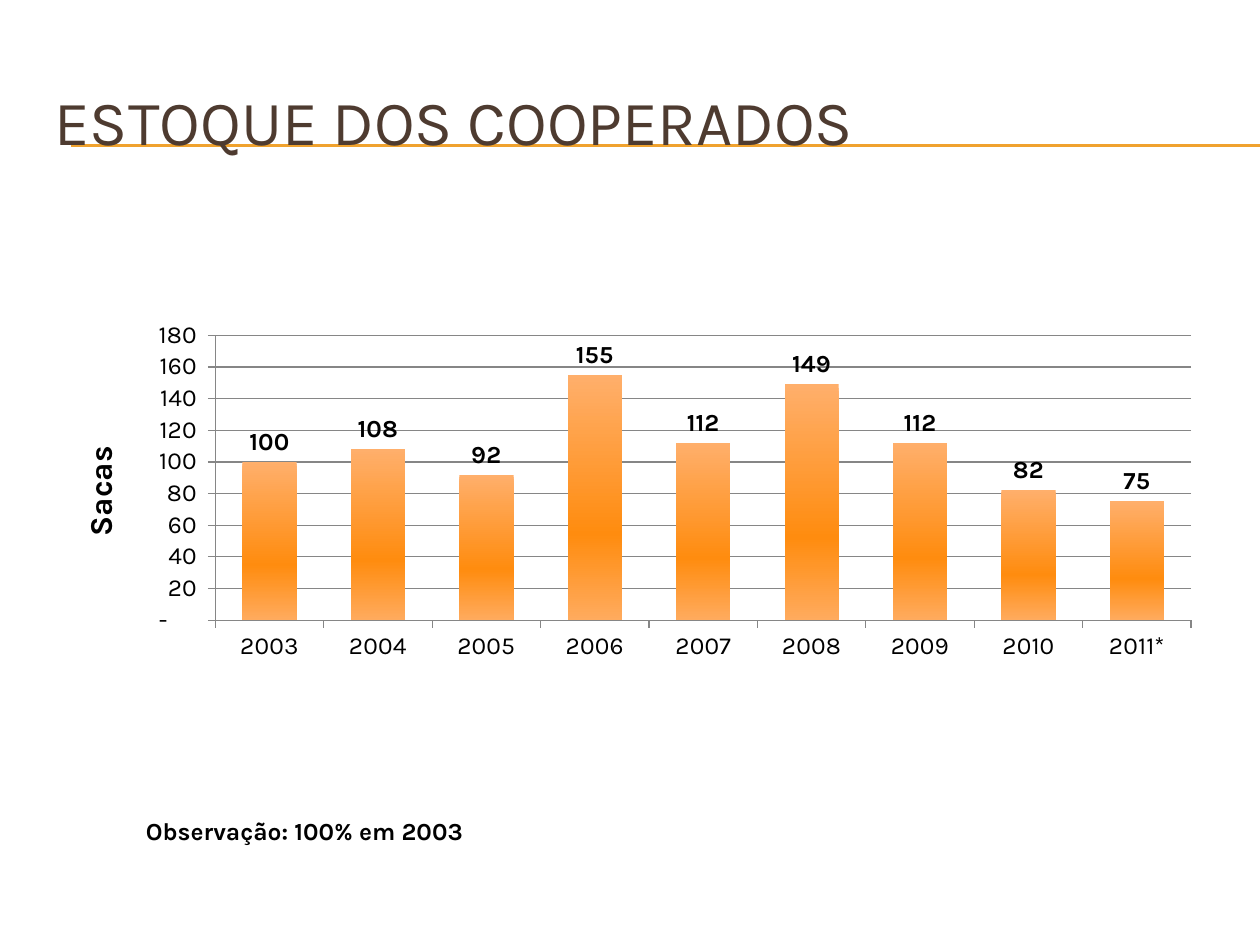
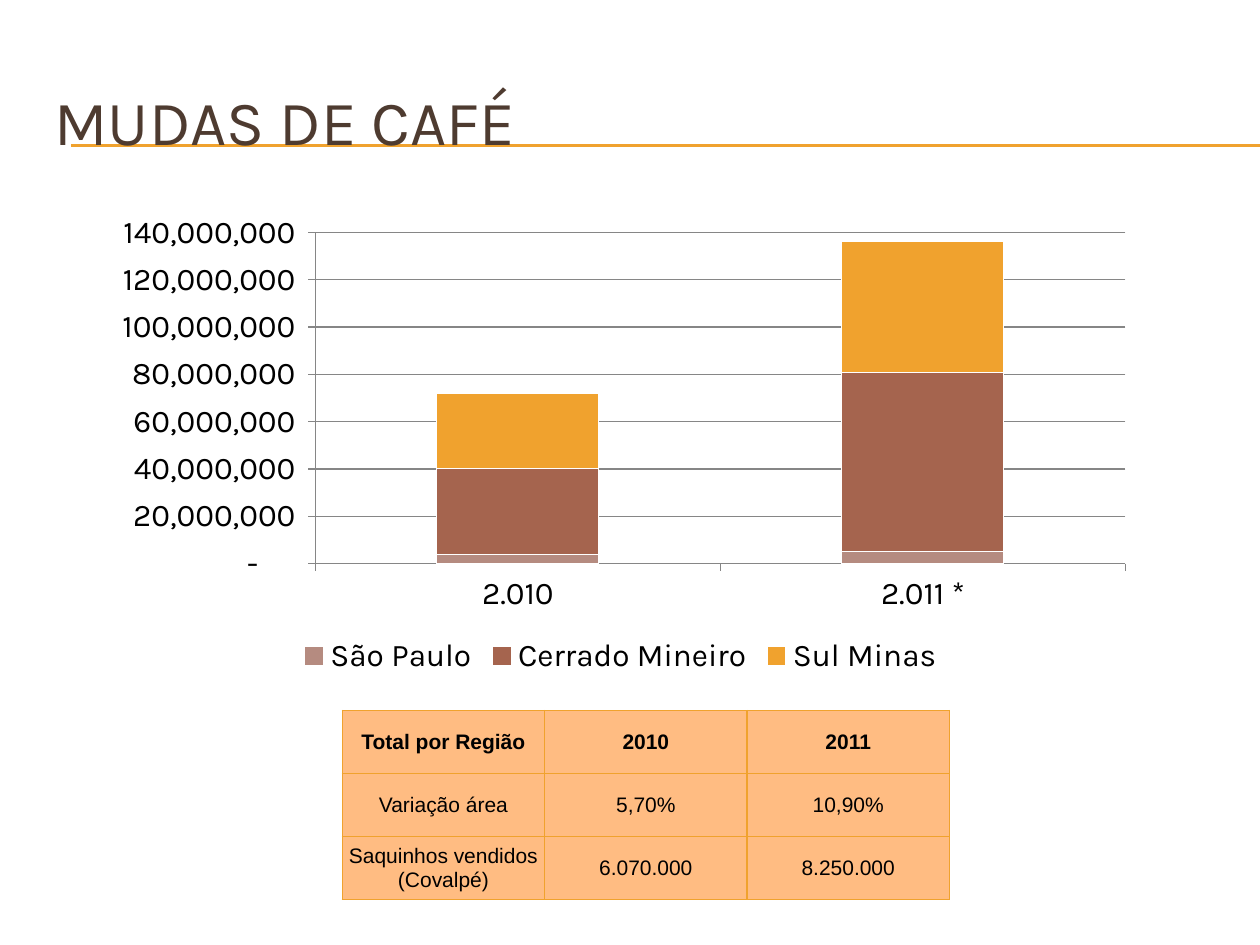
from copy import deepcopy

from lxml import etree
from pptx import Presentation
from pptx.chart.data import CategoryChartData
from pptx.dml.color import RGBColor
from pptx.enum import chart as ch, shapes, text
from pptx.oxml import parse_xml
from pptx.oxml.ns import nsdecls, qn
from pptx.util import Pt

# Shared look
BLACK = RGBColor(0, 0, 0)
WHITE = RGBColor(0xFF, 0xFF, 0xFF)
BROWN = RGBColor(0x4E, 0x3B, 0x30)
GOLD = RGBColor(0xF0, 0xA2, 0x2E)
RUST = RGBColor(0xA5, 0x64, 0x4E)
ROSE = RGBColor(0xB5, 0x8B, 0x80)
PEACH = RGBColor(0xFF, 0xBC, 0x82)
GRAY = RGBColor(0x86, 0x86, 0x86)
GLOW = [(0, RGBColor(0xFF, 0xAF, 0x6B)),
        (0.65, RGBColor(0xFF, 0x8C, 0x0F)),
        (1, RGBColor(0xFF, 0xAB, 0x5E))]
FONT = "Karla"
NUM = '_(* #,##0_);_(* \\(#,##0\\);_(* "-"??_);_('


def style(font, size, color=BLACK, bold=False, name=FONT):
    font.size, font.name, font.bold = Pt(size), name, bold
    font.color.rgb = color


def add_rule(slide, y):
    rule = slide.shapes.add_connector(
        shapes.MSO_CONNECTOR.STRAIGHT, Pt(40.5), Pt(y), Pt(720), Pt(y))
    rule.line.color.rgb = GOLD
    rule.line.width = Pt(0.75)
    etree.SubElement(rule._element.spPr, qn("a:effectLst"))


def add_slide(prs, words):
    """Title slide with the double gold rule behind its title."""
    slide = prs.slides.add_slide(prs.slide_layouts[5])
    for y in (82.8, 83.5):
        add_rule(slide, y)
    title = slide.shapes.title
    title.left, title.top, title.width, title.height = map(
        Pt, (24, 36, 684, 66))
    frame = title.text_frame
    frame.text = words
    frame.vertical_anchor = text.MSO_ANCHOR.MIDDLE
    frame.paragraphs[0].alignment = text.PP_ALIGN.LEFT
    style(frame.paragraphs[0].runs[0].font, 36, BROWN)
    slide.shapes._spTree.append(title._element)
    return slide


def set_plot(chart, box):
    """Fix the inner plot area, as fractions of the chart."""
    area = chart._chartSpace.chart.plotArea
    for old in area.findall(qn("c:layout")):
        area.remove(old)
    vals = "".join(f'<c:{key} val="{val}"/>'
                   for key, val in zip("xywh", box))
    area.insert(0, parse_xml(
        f'<c:layout {nsdecls("c")}><c:manualLayout>'
        '<c:layoutTarget val="inner"/><c:xMode val="edge"/>'
        f'<c:yMode val="edge"/>{vals}</c:manualLayout></c:layout>'))


def add_chart(slide, kind, box, cats, rows, size, top, step, gap, plot):
    data = CategoryChartData()
    data.categories = cats
    for name, vals in rows:
        data.add_series(name, vals)
    chart = slide.shapes.add_chart(kind, *map(Pt, box), data).chart
    style(chart.font, 18)
    chart.has_title = chart.has_legend = False
    for axis in (chart.category_axis, chart.value_axis):
        axis.major_tick_mark = ch.XL_TICK_MARK.OUTSIDE
        axis.format.line.color.rgb = GRAY
        style(axis.tick_labels.font, size)
    axis.minimum_scale, axis.maximum_scale = 0, top
    axis.major_unit = step
    axis.has_major_gridlines = True
    axis.major_gridlines.format.line.color.rgb = GRAY
    axis.tick_labels.number_format = NUM
    axis.tick_labels.number_format_is_linked = False
    chart.plots[0].gap_width = gap
    chart.plots[0].vary_by_categories = False
    set_plot(chart, plot)
    return chart


def add_glow(fill):
    """Three-stop gradient from top to bottom."""
    fill.gradient()
    fill.gradient_angle = 270
    stops = fill.gradient_stops
    last = stops[1]._gs
    last.addnext(deepcopy(last))
    for stop, (pos, color) in zip(fill.gradient_stops, GLOW):
        stop.position = pos
        stop.color.rgb = color


def add_note(slide, box, words):
    note = slide.shapes.add_textbox(*map(Pt, box)).text_frame
    note.word_wrap = False
    note.text = words
    style(note.paragraphs[0].runs[0].font, 14, bold=True)


def add_edges(cell):
    props = cell._tc.get_or_add_tcPr()
    for spot, side in enumerate("LRTB"):
        props.insert(spot, parse_xml(
            f'<a:ln{side} {nsdecls("a")} w="{Pt(0.79)}"><a:solidFill>'
            f'<a:srgbClr val="{GOLD}"/></a:solidFill></a:ln{side}>'))


def add_table(slide, box, rows):
    table = slide.shapes.add_table(
        len(rows), len(rows[0]), *map(Pt, box)).table
    for r, row in enumerate(rows):
        for c, words in enumerate(row):
            cell = table.cell(r, c)
            cell.text = words
            cell.vertical_anchor = text.MSO_ANCHOR.MIDDLE
            cell.margin_left = cell.margin_right = 0
            cell.margin_top = cell.margin_bottom = 0
            cell.fill.solid()
            cell.fill.fore_color.rgb = PEACH
            para = cell.text_frame.paragraphs[0]
            para.alignment = text.PP_ALIGN.CENTER
            style(para.runs[0].font, 12, bold=r == 0, name="Arial")
            add_edges(cell)


def stock_slide(prs):
    slide = add_slide(prs, "ESTOQUE DOS COOPERADOS")
    years = [str(year) for year in range(2003, 2011)] + ["2011*"]
    bags = [100, 108, 92, 155, 112, 149, 112, 82, 75]
    chart = add_chart(
        slide, ch.XL_CHART_TYPE.COLUMN_CLUSTERED, (22.3, 172.8, 671.8, 208.8),
        years, [("Sacas", bags)], 14, 180, 20, 100, (0.15, 0.09, 0.83, 0.78))
    # Axis title
    title = chart.value_axis.axis_title.text_frame
    title.text = "Sacas"
    style(title.paragraphs[0].runs[0].font, 18, bold=True)
    # Bars and their values
    bars = chart.plots[0].series[0]
    add_glow(bars.format.fill)
    tags = bars.data_labels
    tags.show_value = True
    tags.position = ch.XL_LABEL_POSITION.OUTSIDE_END
    tags.number_format, tags.number_format_is_linked = NUM, False
    style(tags.font, 14, bold=True)
    add_note(slide, (76.3, 463, 199.4, 24.5), "Observação: 100% em 2003")


def plant_slide(prs):
    slide = add_slide(prs, "MUDAS DE CAFÉ")
    add_table(slide, (195.6, 406, 347, 108), [
        ("Total por Região", "2010", "2011"),
        ("Variação área", "5,70%", "10,90%"),
        ("Saquinhos vendidos (Covalpé)", "6.070.000", "8.250.000")])
    areas = [("São Paulo", (4000000, 5000000), ROSE),
             ("Cerrado Mineiro", (36000000, 76000000), RUST),
             ("Sul Minas", (32000000, 55000000), GOLD)]
    chart = add_chart(
        slide, ch.XL_CHART_TYPE.COLUMN_STACKED, (54, 116.6, 601.2, 272.2),
        ["2.010", "2.011 *"], [area[:2] for area in areas],
        18, 140000000, 20000000, 150, (0.21, 0.06, 0.77, 0.695))
    chart.plots[0].overlap = 100
    for bars, (_, _, color) in zip(chart.plots[0].series, areas):
        bars.format.fill.solid()
        bars.format.fill.fore_color.rgb = color
        bars.format.line.color.rgb = WHITE
    chart.has_legend = True
    chart.legend.position = ch.XL_LEGEND_POSITION.BOTTOM
    chart.legend.include_in_layout = False
    style(chart.legend.font, 18)


def main():
    prs = Presentation()
    prs.slide_width, prs.slide_height = Pt(720), Pt(540)
    stock_slide(prs)
    plant_slide(prs)
    prs.save("out.pptx")


if __name__ == "__main__":
    main()
